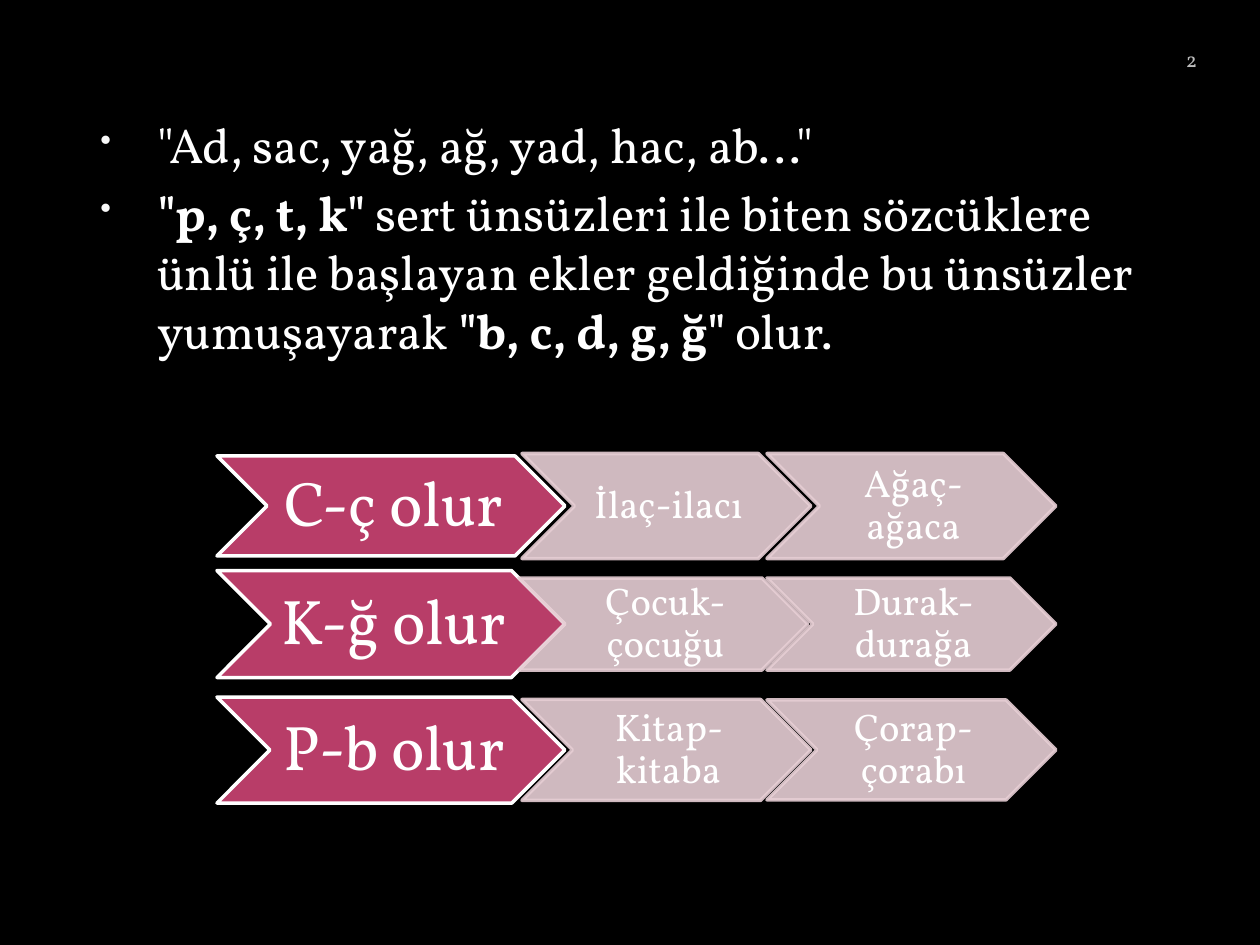
"""Build the slide on softening of hard consonants, with three rows of chevrons."""
from lxml import etree
from pptx import Presentation, util as u
from pptx.dml.color import RGBColor
from pptx.enum import shapes, text
from pptx.oxml.ns import qn

PX = u.Inches(1) / 126
FONT = "Vollkorn"
BLACK = RGBColor(0x00, 0x00, 0x00)
WHITE = RGBColor(0xFF, 0xFF, 0xFF)
GREY = RGBColor(0xBD, 0xBD, 0xBD)
CRIMSON = RGBColor(0xB8, 0x3D, 0x68)
PINK = RGBColor(0xE6, 0xCE, 0xD4)


def px(*lengths):
    return [u.Emu(round(length * PX)) for length in lengths]


def add_run(paragraph, words, size, color=WHITE, bold=False):
    run = paragraph.add_run()
    run.text = words
    run.font.name = FONT
    run.font.size = u.Pt(size)
    run.font.bold = bold
    run.font.color.rgb = color


prs = Presentation()
prs.slide_width, prs.slide_height = px(1260, 945)
slide = prs.slides.add_slide(prs.slide_layouts[6])
slide.background.fill.solid()
slide.background.fill.fore_color.rgb = BLACK

rules = slide.shapes.add_textbox(*px(69, 108, 1134, 791)).text_frame
rules.word_wrap = True
RULES = [
    [('"Ad, sac, yağ, ağ, yad, hac, ab..."', False)],
    [('"p, ç, t, k"', True),
     (" sert ünsüzleri ile biten sözcüklere ünlü ile başlayan ekler "
      "geldiğinde bu ünsüzler yumuşayarak ", False),
     ('"b, c, d, g, ğ"', True),
     (" olur.", False)],
]
for index, rule in enumerate(RULES):
    paragraph = rules.add_paragraph() if index else rules.paragraphs[0]
    paragraph.space_before = u.Pt(5.6)
    props = paragraph._p.get_or_add_pPr()
    hanging, = px(57)
    props.set("marL", str(px(76)[0]))
    props.set("indent", str(-hanging))
    bullet_color = etree.SubElement(props, qn("a:buClr"))
    etree.SubElement(bullet_color, qn("a:srgbClr"), val="F9F9F9")
    etree.SubElement(props, qn("a:buSzPct"), val="65000")
    etree.SubElement(props, qn("a:buChar"), char="•")
    for words, bold in rule:
        add_run(paragraph, words, 28, bold=bold)

number = slide.shapes.add_textbox(*px(1092, 0, 105, 78)).text_frame
number.word_wrap = True
number.margin_left = number.margin_right = 0
number.vertical_anchor = text.MSO_ANCHOR.BOTTOM
number.paragraphs[0].alignment = text.PP_ALIGN.RIGHT
add_run(number.paragraphs[0], "2", 12, GREY)

ROWS = [
    (506, [("C-ç olur", 217, 100), ("İlaç-ilacı", 522, 105), ("Ağaç-ağaca", 767, 105)]),
    (624, [("K-ğ olur", 217, 107), ("Çocuk-çocuğu", 519, 92), ("Durak-durağa", 767, 92)]),
    (750, [("P-b olur", 217, 106), ("Kitap-kitaba", 522, 101), ("Çorap-çorabı", 767, 100)]),
]
for middle, steps in ROWS:
    for column, (words, left, height) in enumerate(steps):
        is_head = column == 0
        width = 348 if is_head else 289
        chevron = slide.shapes.add_shape(
            shapes.MSO_SHAPE.CHEVRON, *px(left, middle - height / 2, width, height))
        chevron.shadow.inherit = False
        chevron.fill.solid()
        chevron.fill.fore_color.rgb = CRIMSON if is_head else PINK
        chevron.line.color.rgb = WHITE if is_head else PINK
        chevron.line.width = u.Pt(2)
        if not is_head:
            for color in chevron._element.spPr.iter(qn("a:srgbClr")):
                etree.SubElement(color, qn("a:alpha"), val="90000")
        label = chevron.text_frame
        label.word_wrap = True
        label.vertical_anchor = text.MSO_ANCHOR.MIDDLE
        label.margin_left, label.margin_right = px(6 if is_head else 4, 0)
        label.margin_top = label.margin_bottom = px(4 if is_head else 3)[0]
        label.paragraphs[0].alignment = text.PP_ALIGN.CENTER
        label.paragraphs[0].line_spacing = 0.9
        add_run(label.paragraphs[0], words, 36 if is_head else 22)

prs.save("out.pptx")
